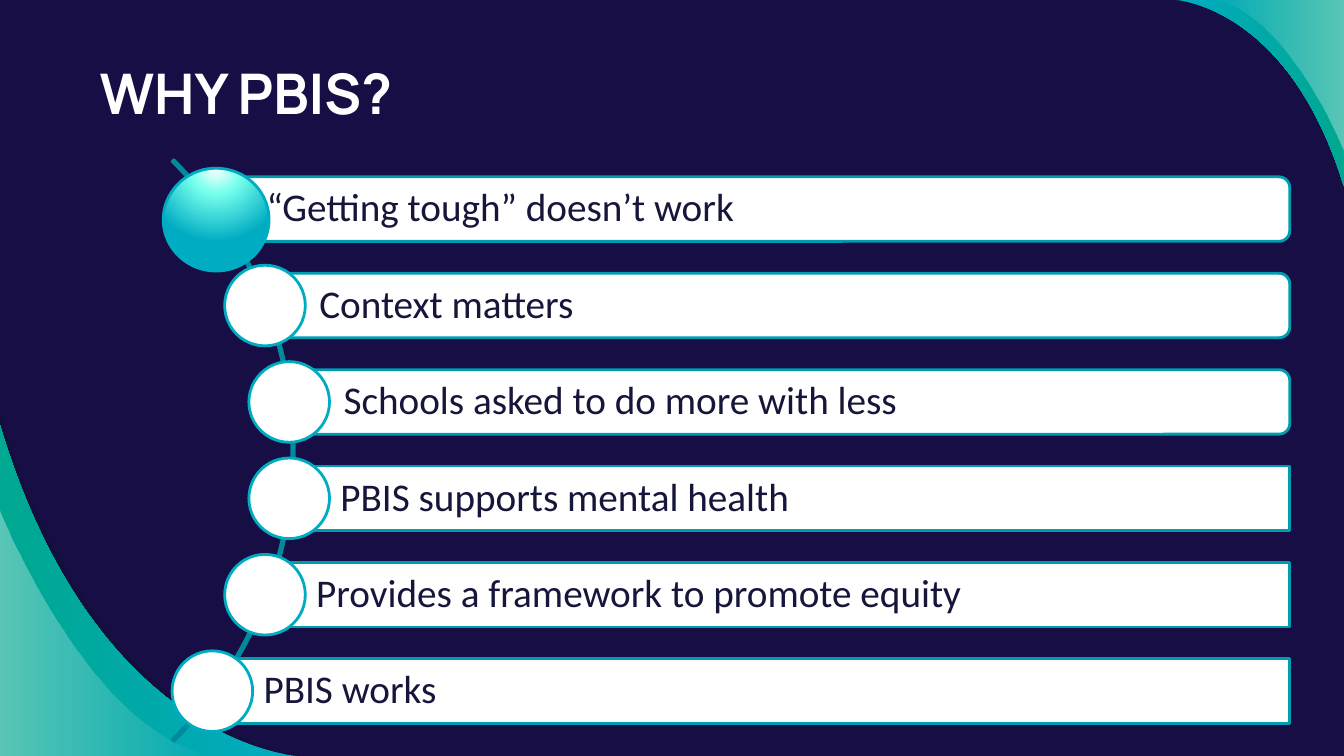
from lxml import etree
from pptx import Presentation
from pptx import util as u
from pptx.dml.color import RGBColor
from pptx.enum import shapes, text
from pptx.oxml.ns import qn

NAVY = RGBColor(0x16, 0x0E, 0x44)
SHADE = RGBColor(0x12, 0x10, 0x2F)
INK = RGBColor(0x15, 0x16, 0x3A)
WHITE = RGBColor(0xFF, 0xFF, 0xFF)
CYAN = RGBColor(0x00, 0xAC, 0xC2)
GREEN = RGBColor(0x00, 0xA7, 0x91)
MINT = RGBColor(0x76, 0xFF, 0xED)
BAR_LINE = RGBColor(0x00, 0x9C, 0xB0)
ARC_LINE = RGBColor(0x00, 0x8A, 0x9B)

REASONS = [
    "“Getting tough” doesn’t work",
    "Context matters",
    "Schools asked to do more with less",
    "PBIS supports mental health",
    "Provides a framework to promote equity",
    "PBIS works",
]
INDENTS = [151.7, 189.3, 206.6]
BAR_RIGHT, BAR_HEIGHT = 921.3, 46.1
FIRST_CENTER, PITCH = 149.4, 68.86
DOT = 57.6


def add_alpha(color, percent):
    etree.SubElement(color, qn("a:alpha")).set("val", str(percent * 1000))


def fill_gradient(sp, stops, angle=0, focus=None):
    """Stops are (position, colour, opacity) in percent; focus is the l, t, r, b of a circular fill."""
    grad = etree.Element(qn("a:gradFill"), rotWithShape="1")
    gs_list = etree.SubElement(grad, qn("a:gsLst"))
    for position, color, opacity in stops:
        gs = etree.SubElement(gs_list, qn("a:gs"), pos=str(position * 1000))
        clr = etree.SubElement(gs, qn("a:srgbClr"), val=str(color))
        if opacity < 100:
            add_alpha(clr, opacity)
    if focus:
        circle = etree.SubElement(grad, qn("a:path"), {"path": "circle"})
        sides = {side: str(value * 1000) for side, value in zip("ltrb", focus)}
        etree.SubElement(circle, qn("a:fillToRect"), sides)
    else:
        etree.SubElement(grad, qn("a:lin"), ang=str(angle * 60000), scaled="0")
    sp.fill.background()
    spPr = sp._element.spPr
    spPr.replace(spPr.find(qn("a:noFill")), grad)


def add_swoosh(s, curve, corner):
    """Area between a cubic Bezier curve and a slide corner."""
    start, *rest = [(u.Pt(x), u.Pt(y)) for x, y in curve + [corner]]
    builder = s.shapes.build_freeform(*start)
    builder.add_line_segments(rest, close=True)
    sp = builder.convert_to_shape()
    # The first three line targets become the control and end points of one curve.
    lines = list(sp._element.iter(qn("a:lnTo")))[:3]
    bezier = etree.Element(qn("a:cubicBezTo"))
    lines[0].addprevious(bezier)
    for line in lines:
        bezier.append(line[0])
        line.getparent().remove(line)
    sp.shadow.inherit = False
    sp.line.fill.background()
    return sp


def add_outlined(s, kind, left, top, width, height, line, fill=None):
    sp = s.shapes.add_shape(kind, u.Pt(left), u.Pt(top), u.Pt(width), u.Pt(height))
    sp.shadow.inherit = False
    if fill is None:
        sp.fill.background()
    else:
        sp.fill.solid()
        sp.fill.fore_color.rgb = fill
    sp.line.color.rgb = line
    sp.line.width = u.Pt(2)
    return sp


def write_text(sp, words, font, size, color, insets, bold=False, spacing=1.0,
               anchor=text.MSO_ANCHOR.MIDDLE):
    tf = sp.text_frame
    tf.word_wrap = True
    tf.vertical_anchor = anchor
    tf.margin_left, tf.margin_top, tf.margin_right, tf.margin_bottom = map(u.Pt, insets)
    p = tf.paragraphs[0]
    p.alignment = text.PP_ALIGN.LEFT
    p.line_spacing = spacing
    r = p.add_run()
    r.text = words
    r.font.name = font
    r.font.size = u.Pt(size)
    r.font.bold = bold
    r.font.color.rgb = color


def add_corners(s):
    tint = [(0, CYAN, 100), (100, GREEN, 100)]
    glow = [(0, WHITE, 0), (100, WHITE, 36)]
    lower, upper = (0, 540), (960, 0)

    shade = add_swoosh(s, [(0, 297.4), (70.6, 532.1), (218.2, 540), (218.2, 540)], lower)
    shade.fill.solid()
    shade.fill.fore_color.rgb = SHADE
    add_alpha(shade._element.spPr.find(".//" + qn("a:srgbClr")), 54)

    for curve, corner, stops, angle in [
        ([(212.4, 540), (212.4, 540), (68.4, 532.1), (0, 303.8)], lower, tint, 180),
        ([(0, 364.3), (0, 364.3), (65.5, 529.2), (155.5, 540)], lower, glow, 180),
        ([(840.2, 0), (840.2, 0), (920.9, 4.3), (960, 133.2)], upper, tint, 0),
        ([(960, 107.3), (960, 107.3), (919.4, 6.5), (864.7, 0)], upper, glow, 0),
    ]:
        fill_gradient(add_swoosh(s, curve, corner), stops, angle)


def add_reason(s, row, words):
    shape = shapes.MSO_SHAPE
    left = INDENTS[min(row, len(REASONS) - 1 - row)]
    center = FIRST_CENTER + row * PITCH
    kind = shape.ROUNDED_RECTANGLE if row < 3 else shape.RECTANGLE
    bar = add_outlined(s, kind, left, center - BAR_HEIGHT / 2, BAR_RIGHT - left,
                       BAR_HEIGHT, BAR_LINE, WHITE)
    write_text(bar, words, "Calibri", 28, INK, (36.6, 5.6, 5.6, 5.6), spacing=0.9)
    add_outlined(s, shape.OVAL, left - DOT / 2, center - DOT / 2, DOT, DOT, CYAN, WHITE)


def main():
    prs = Presentation()
    prs.slide_width, prs.slide_height = u.Pt(960), u.Pt(540)
    s = prs.slides.add_slide(prs.slide_layouts[6])
    s.background.fill.solid()
    s.background.fill.fore_color.rgb = NAVY

    add_corners(s)
    title = s.shapes.add_textbox(u.Pt(64.1), u.Pt(36.7), u.Pt(738.7), u.Pt(66.2))
    write_text(title, "WHY PBIS?", "Manrope", 40, WHITE, (7.2, 5.1, 7.2, 5.1), bold=True,
               anchor=text.MSO_ANCHOR.TOP)

    arc = add_outlined(s, shapes.MSO_SHAPE.BLOCK_ARC, -377.3, 28.1, 587.5, 587.5, ARC_LINE)
    for i, value in enumerate((189, 27, 0.003)):
        arc.adjustments[i] = value
    for row, words in enumerate(REASONS):
        add_reason(s, row, words)

    ball = add_outlined(s, shapes.MSO_SHAPE.OVAL, 116.6, 120.2, 75.6, 73.4, CYAN)
    fill_gradient(ball, [(0, WHITE, 100), (35, MINT, 100), (100, CYAN, 100)],
                  focus=(50, -80, 50, 180))
    prs.save("out.pptx")


if __name__ == "__main__":
    main()
